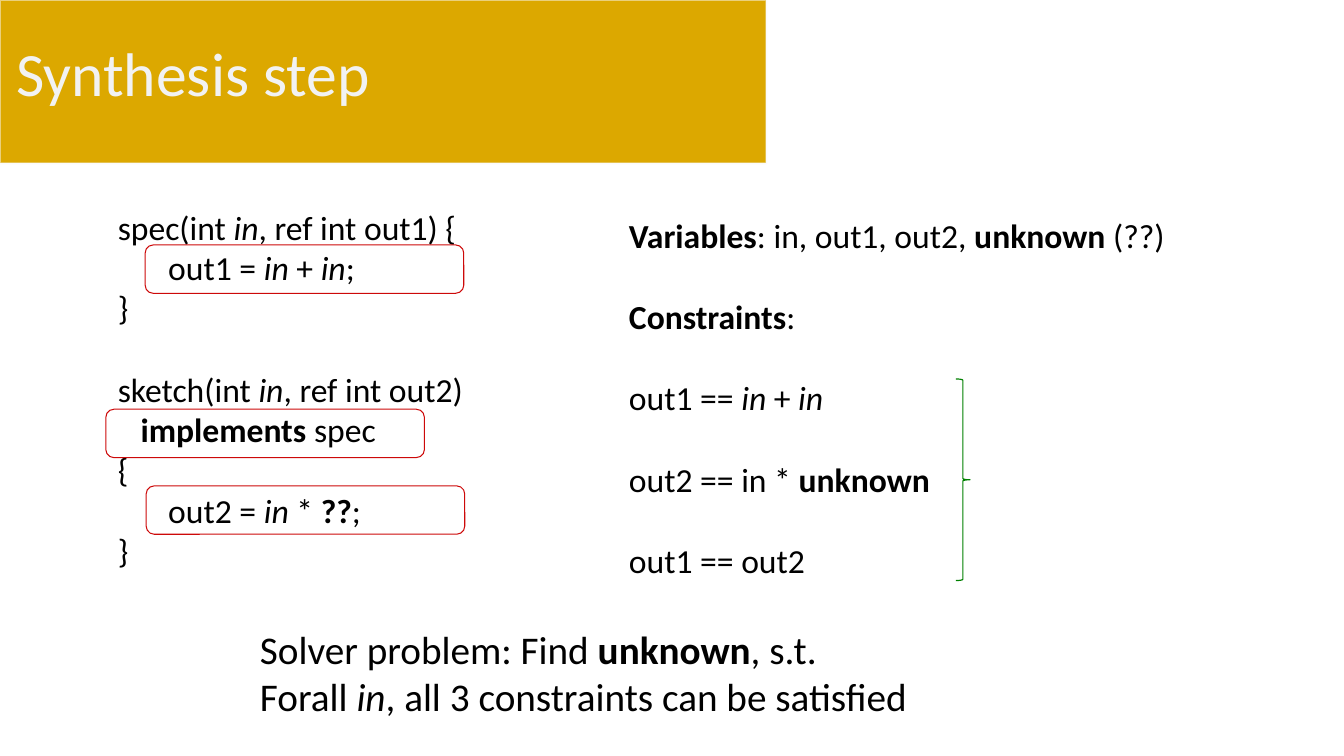
from dataclasses import dataclass

from lxml import etree
from pptx import Presentation
from pptx.dml.color import RGBColor
from pptx.enum.shapes import MSO_SHAPE
from pptx.enum.text import MSO_ANCHOR, PP_ALIGN
from pptx.oxml.ns import qn
from pptx.util import Inches, Pt

PROCESS = MSO_SHAPE.FLOWCHART_PROCESS
ROUND = MSO_SHAPE.ROUNDED_RECTANGLE
BRACE = MSO_SHAPE.RIGHT_BRACE
MIDDLE = MSO_ANCHOR.MIDDLE
LEFT = PP_ALIGN.LEFT


@dataclass(frozen=True)
class Theme:
    """Colours, font and type sizes of the slide."""
    gold: str = "DCA800"
    edge: str = "F9F9F9"
    pale: str = "F2F2F2"
    ink: str = "000000"
    red: str = "CD0909"
    green: str = "008000"
    font: str = "Calibri"
    head: int = 44
    body: int = 24
    goal: int = 28
    gap: float = 29.3


THEME = Theme()

CODE = [
    ["spec(int /in/, ref int out1) {", "\tout1 = /in/ + /in/;", "}"],
    ["sketch(int /in/, ref int out2)", "   |implements |spec", "{",
     "\tout2 = /in/ * |??|;", "}"],
]
RULES = [
    ["|Variables|: in, out1, out2, |unknown| (??)"],
    ["|Constraints|:"],
    ["out1 == /in/ + /in/"],
    ["out2 == in * |unknown|"],
    ["out1 == out2"],
]
GOAL = [["Solver problem: Find |unknown|, s.t.",
         "Forall /in/, all 3 constraints can be satisfied"]]


def style(run, size, color):
    """Give a run its font, size and colour."""
    run.font.name = THEME.font
    run.font.size = Pt(size)
    run.font.color.rgb = RGBColor.from_string(color)


def write(para, line, size):
    """Fill a paragraph, with |bold| and /italic/ marks."""
    for i, part in enumerate(line.split("|")):
        for j, bit in enumerate(part.split("/")):
            if bit:
                run = para.add_run()
                run.text = bit
                style(run, size, THEME.ink)
                run.font.bold = i % 2 == 1
                run.font.italic = j % 2 == 1


def add_text(slide, box, groups, size):
    """Set groups of lines in a box, with a gap between groups."""
    frame = slide.shapes.add_textbox(*map(Inches, box)).text_frame
    frame.word_wrap = True
    para = frame.paragraphs[0]
    for g, group in enumerate(groups):
        for n, line in enumerate(group):
            if g or n:
                para = frame.add_paragraph()
            if g and not n:
                para.space_before = Pt(THEME.gap)
            write(para, line, size)


def add_mark(slide, kind, box, color, width):
    """Add an outlined shape without fill or shadow."""
    shape = slide.shapes.add_shape(kind, *map(Inches, box))
    shape.shadow.inherit = False
    shape.fill.background()
    shape.line.color.rgb = RGBColor.from_string(color)
    shape.line.width = Pt(width)
    return shape


def add_head(slide, box, text):
    """Lay the gold banner behind the slide title."""
    x, y, w, h = box
    band = add_mark(slide, PROCESS, box, THEME.edge, 1.35)
    band.fill.solid()
    band.fill.fore_color.rgb = RGBColor.from_string(THEME.gold)
    tint = band.line.fill._xPr.find(".//" + qn("a:srgbClr"))
    etree.SubElement(tint, qn("a:alpha"), val="50000")
    title = slide.shapes.title
    title._element.addprevious(band._element)
    title.left, title.top = Inches(x + 0.06), Inches(y + 0.03)
    title.width, title.height = Inches(w - 0.09), Inches(h - 0.17)
    frame = title.text_frame
    frame.text = text
    frame.vertical_anchor = MIDDLE
    para = frame.paragraphs[0]
    para.alignment = LEFT
    para.line_spacing = 0.9
    style(para.runs[0], THEME.head, THEME.pale)


def add_code(slide, box):
    """Show the code with its key lines ringed in red."""
    x, y, w, h = box
    add_text(slide, box, CODE, THEME.body)
    for dx, dy in ((0.37, 0.43), (0.38, 2.82), (-0.02, 2.06)):
        add_mark(slide, ROUND, (x + dx, y + dy, 3.16, 0.48), THEME.red, 0.75)


def add_rules(slide, box):
    """List variables and constraints, with a brace beside the latter."""
    x, y, w, h = box
    add_text(slide, box, RULES, THEME.body)
    add_mark(slide, BRACE, (x + 3.34, y + 1.68, 0.14, 2), THEME.green, 0.85)


def main():
    """Build the slide and save it."""
    deck = Presentation()
    deck.slide_width, deck.slide_height = Inches(13.33), Inches(7.5)
    slide = deck.slides.add_slide(deck.slide_layouts[5])
    add_head(slide, (0, 0, 7.6, 1.62), "Synthesis step")
    add_code(slide, (1.07, 2, 3.88, 3.74))
    add_rules(slide, (6.14, 2.08, 5.57, 3.74))
    add_text(slide, (2.48, 6.15, 7.18, 1.04), GOAL, THEME.goal)
    deck.save("out.pptx")


if __name__ == "__main__":
    main()
